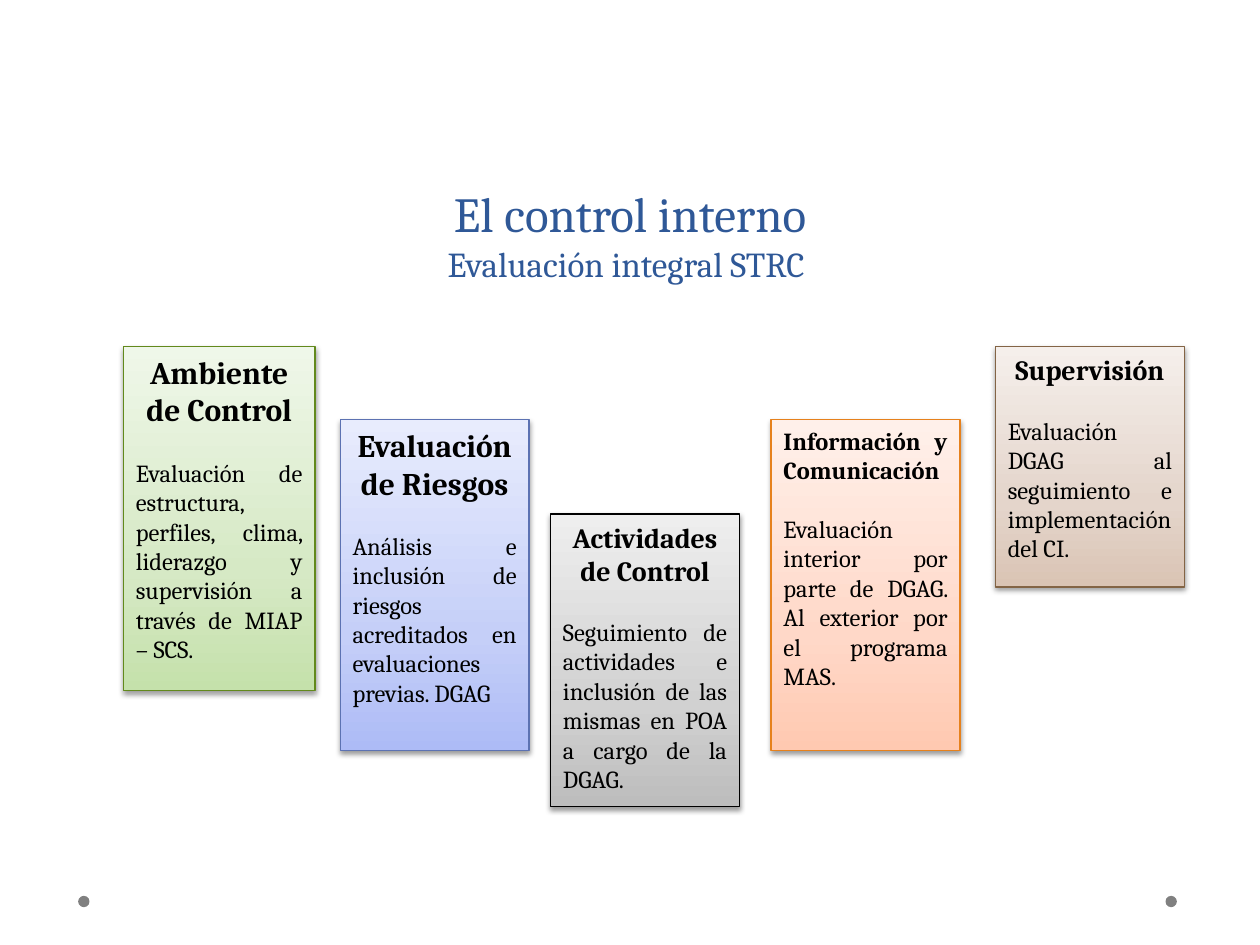
from copy import deepcopy

from lxml import etree
from pptx import Presentation
from pptx.dml.color import RGBColor
from pptx.enum.shapes import MSO_SHAPE as Shape
from pptx.enum.text import MSO_ANCHOR as Anchor, MSO_AUTO_SIZE as AutoSize, PP_ALIGN as Align
from pptx.oxml.ns import qn
from pptx.util import Inches, Pt

FONT = "Cambria"
BODY_SIZE = 14

# left, top, width, height, gradient (bottom to top), line, heading, heading size, alignment, body
CARDS = [
    (0.98, 2.75, 1.52, 2.73, ("C5E1AB", "D6E9C5", "EFF7E9"), "62891C",
     "Ambiente de Control", 18, Align.CENTER,
     "Evaluación de estructura, perfiles, clima, liderazgo y supervisión a través de MIAP – SCS."),
    (2.7, 3.33, 1.5, 2.63, ("ADBBF6", "C5CFF8", "E8ECFD"), "5C72B2",
     "Evaluación de Riesgos", 18, Align.CENTER,
     "Análisis e inclusión de riesgos acreditados en evaluaciones previas. DGAG"),
    (4.37, 4.08, 1.5, 2.32, ("BDBDBD", "D1D1D1", "EEEEEE"), "000000",
     "Actividades de Control", 16, Align.CENTER,
     "Seguimiento de actividades e inclusión de las mismas en POA a cargo de la DGAG."),
    (6.12, 3.33, 1.5, 2.63, ("FFC9B1", "FFD8C8", "FFF0EA"), "E6811C",
     "Información y Comunicación", 14, Align.JUSTIFY,
     "Evaluación interior por parte de DGAG. Al exterior por el programa MAS."),
    (7.9, 2.75, 1.5, 1.91, ("DAC4B4", "E4D5CB", "F5EFEB"), "836445",
     "Supervisión", 16, Align.CENTER,
     "Evaluación DGAG al seguimiento e implementación del CI."),
]


def color(value):
    return RGBColor.from_string(value)


def write(para, text, size, ink="000000", bold=False, align=Align.CENTER, before=0):
    para.alignment = align
    para.space_before = Pt(before)
    span = para.add_run()
    span.text = text
    span.font.name = FONT
    span.font.size = Pt(size)
    span.font.bold = bold
    span.font.color.rgb = color(ink)


def place(shape, left, top, width, height):
    shape.left, shape.top = Inches(left), Inches(top)
    shape.width, shape.height = Inches(width), Inches(height)


def fill_gradient(shape, colors):
    """Fill upwards with three colours, the middle one at 35 %."""
    shape.fill.gradient()
    shape.fill.gradient_angle = 90
    first = next(shape._element.spPr.iter(qn("a:gs")))
    first.addnext(deepcopy(first))
    for stop, position, value in zip(shape.fill.gradient_stops, (0, 0.35, 1), colors):
        stop.position = position
        stop.color.rgb = color(value)


def add_shadow(shape):
    shape.shadow.inherit = False
    effects = shape._element.spPr.find(qn("a:effectLst"))
    shadow = etree.SubElement(effects, qn("a:outerShdw"), blurRad=str(Pt(3.1)),
                              dist=str(Pt(1.6)), dir="5400000", rotWithShape="0")
    ink = etree.SubElement(shadow, qn("a:srgbClr"), val="000000")
    etree.SubElement(ink, qn("a:alpha"), val="38000")


def add_title(page, left, top, width, height):
    title = page.shapes.title
    place(title, left, top, width, height)
    frame = title.text_frame
    frame.auto_size = AutoSize.NONE
    frame.vertical_anchor = Anchor.TOP
    write(frame.paragraphs[0], "El control interno", 28, "2F5897")
    write(frame.add_paragraph(), "Evaluación integral STRC ", 20, "2F5897")


def add_card(page, left, top, width, height, colors, line, heading, size, align, body):
    card = page.shapes.add_shape(Shape.RECTANGLE, 0, 0, 0, 0)
    place(card, left, top, width, height)
    fill_gradient(card, colors)
    card.line.color.rgb = color(line)
    card.line.width = Pt(0.75)
    add_shadow(card)
    frame = card.text_frame
    frame.word_wrap = True
    frame.vertical_anchor = Anchor.TOP
    write(frame.paragraphs[0], heading, size, bold=True, align=align)
    write(frame.add_paragraph(), body, BODY_SIZE, align=Align.JUSTIFY, before=BODY_SIZE * 1.2)


def add_dots(page, lefts, top, size):
    for left in lefts:
        dot = page.shapes.add_shape(Shape.OVAL, 0, 0, 0, 0)
        place(dot, left, top, size, size)
        dot.fill.solid()
        dot.fill.fore_color.rgb = color("808080")
        dot.line.fill.background()
        dot.shadow.inherit = False


def main():
    deck = Presentation()
    deck.slide_width, deck.slide_height = Inches(10), Inches(7.5)
    page = deck.slides.add_slide(deck.slide_layouts[5])
    # Footer dots
    add_dots(page, (9.25, 0.62), 7.11, 0.09)
    # Heading
    add_title(page, 0.5, 1.41, 9, 0.58)
    # The five components of internal control
    for card in CARDS:
        add_card(page, *card)
    deck.save("out.pptx")


if __name__ == "__main__":
    main()
